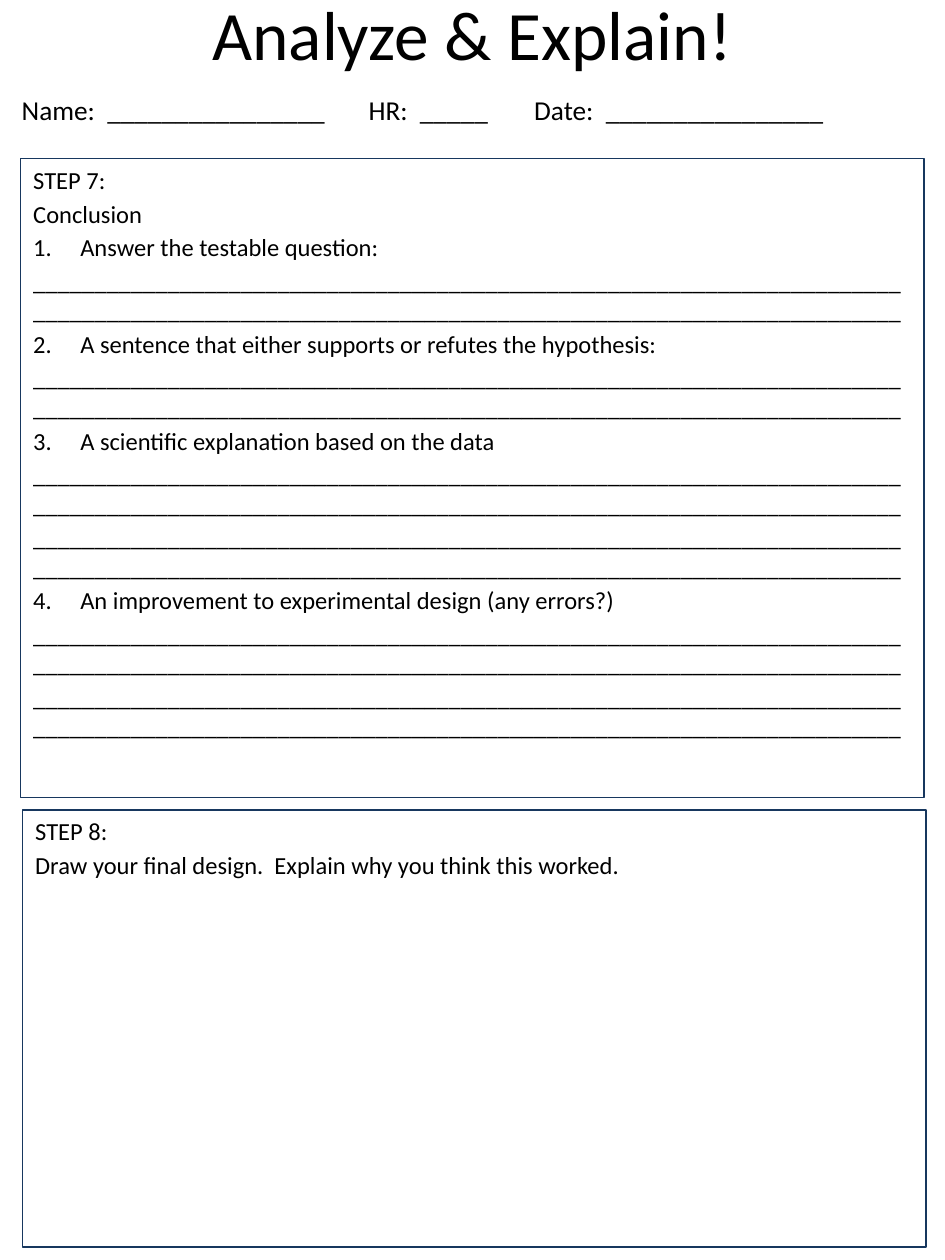
"""Build the Analyze & Explain worksheet slide."""
from dataclasses import dataclass

from lxml.etree import SubElement
from pptx import Presentation
from pptx.dml.color import RGBColor
from pptx.enum.shapes import MSO_SHAPE
from pptx.enum.text import MSO_ANCHOR, PP_ALIGN
from pptx.oxml.ns import qn
from pptx.util import Cm, Pt

COLORS = {"text": "000000", "border": "17375E"}
FONT = "Calibri"
ANSWER_RULE = "_" * 142
INDENT = Cm(0.95)


@dataclass
class Label:
    text: str
    left: float
    top: float
    width: float
    height: float
    size: float


@dataclass
class Question:
    text: str
    answers: int


@dataclass
class Panel:
    left: float
    top: float
    height: float
    headings: list[str]
    questions: list[Question]


LABELS = [
    Label("Analyze & Explain!", 1.42, -0.15, 16.2, 1.63, 39.6),
    Label("Name:  " + "_" * 16, 0, 1.47, 6.99, 1.47, 15.6),
    Label("Date:  " + "_" * 16, 10.19, 1.47, 6.99, 1.47, 15.6),
    Label("HR:  " + "_" * 5, 6.55, 1.47, 4.17, 1.47, 15.6),
]

PANELS = [
    Panel(0.42, 3.2, 12.88, ["STEP 7:", "Conclusion"], [
        Question("Answer the testable question:", 1),
        Question("A sentence that either supports or refutes the hypothesis:", 1),
        Question("A scientific explanation based on the data", 2),
        Question("An improvement to experimental design (any errors?)", 2),
    ]),
    Panel(0.46, 16.33, 8.81, [
        "STEP 8:",
        "Draw your final design.  Explain why you think this worked.",
    ], []),
]


def style(paragraph, text: str, size: float, alignment: PP_ALIGN) -> None:
    paragraph.text = text
    paragraph.alignment = alignment
    paragraph.font.name = FONT
    paragraph.font.size = Pt(size)
    paragraph.font.color.rgb = RGBColor.from_string(COLORS["text"])


def number(paragraph, start: int) -> None:
    properties = paragraph._p.get_or_add_pPr()
    properties.set("marL", str(INDENT))
    properties.set("indent", str(-INDENT))
    bullet = SubElement(properties, qn("a:buAutoNum"), type="arabicPeriod", startAt=str(start))
    properties.insert_element_before(bullet, "a:tabLst", "a:defRPr", "a:extLst")


def draw_label(page, label: Label) -> None:
    box = page.shapes.add_textbox(
        Cm(label.left), Cm(label.top), Cm(label.width), Cm(label.height))
    frame = box.text_frame
    frame.word_wrap = True
    frame.vertical_anchor = MSO_ANCHOR.MIDDLE
    style(frame.paragraphs[0], label.text, label.size, PP_ALIGN.CENTER)


def draw_panel(page, panel: Panel) -> None:
    box = page.shapes.add_shape(
        MSO_SHAPE.RECTANGLE, Cm(panel.left), Cm(panel.top), Cm(18.21), Cm(panel.height))
    box.shadow.inherit = False
    box.fill.background()
    box.line.color.rgb = RGBColor.from_string(COLORS["border"])
    box.line.width = Pt(0.75)
    frame = box.text_frame
    frame.word_wrap = True
    frame.vertical_anchor = MSO_ANCHOR.TOP

    lines = [(heading, 0) for heading in panel.headings]
    for position, question in enumerate(panel.questions, start=1):
        lines.append((question.text, position))
        lines += [(ANSWER_RULE, 0)] * question.answers
    for index, (text, position) in enumerate(lines):
        para = frame.add_paragraph() if index else frame.paragraphs[0]
        style(para, text, 14, PP_ALIGN.LEFT)
        para.space_before = Pt(2.4)
        if position:
            number(para, position)


def main() -> None:
    deck = Presentation()
    deck.slide_width, deck.slide_height = Cm(19.05), Cm(25.4)
    page = deck.slides.add_slide(deck.slide_layouts[6])
    for label in LABELS:
        draw_label(page, label)
    for panel in PANELS:
        draw_panel(page, panel)
    deck.save("out.pptx")


if __name__ == "__main__":
    main()
